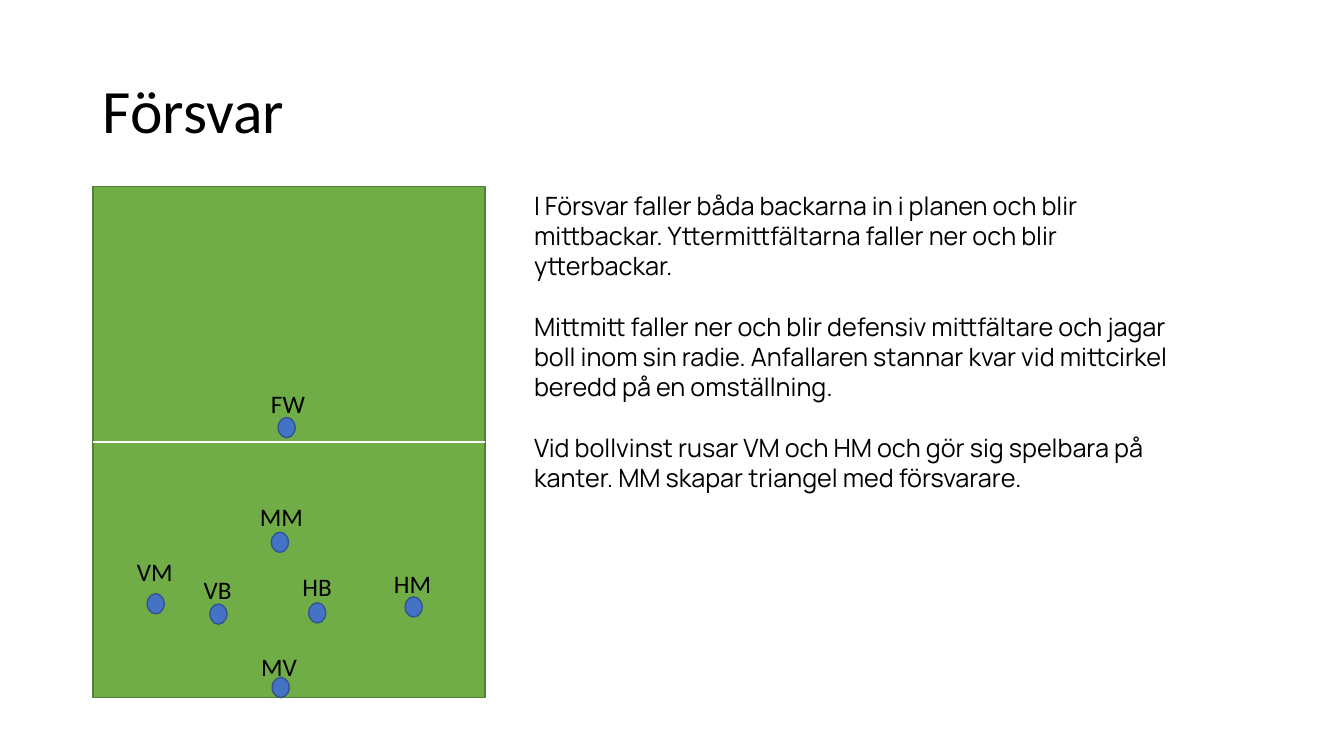
from lxml import etree
from pptx import Presentation
from pptx.dml.color import RGBColor
from pptx.enum.shapes import MSO_CONNECTOR as CONN, MSO_SHAPE as SHAPE
from pptx.enum.text import MSO_ANCHOR as ANCHOR, MSO_AUTO_SIZE as AUTO
from pptx.oxml.ns import qn
from pptx.util import Cm, Pt

COLORS = {"text": "000000", "grass": "70AD47", "grass_edge": "538035",
          "chalk": "FFFFFF", "player": "4472C4", "player_edge": "325491"}

TITLE_BOX = (2.34, 1.02, 29.21, 3.68)
PITCH_BOX = (2.34, 4.7, 9.88, 12.88)
TACTICS_BOX = (13.21, 4.67, 16.94, 10.26)
DOT_W, DOT_H, LABEL_H = 0.43, 0.51, 1.02

# label, dot left and top, label left, top and width, in cm from the pitch corner
PLAYERS = [
    ("MV", 4.52, 12.37, 3.99, 11.58, 1.42),
    ("VB", 2.95, 10.52, 2.54, 9.65, 1.22),
    ("MM", 4.5, 8.71, 3.96, 7.8, 1.6),
    ("VM", 1.37, 10.26, 0.86, 9.19, 1.42),
    ("HB", 5.44, 10.49, 5.03, 9.58, 1.27),
    ("HM", 7.87, 10.34, 7.34, 9.5, 1.47),
    ("FW", 4.67, 5.82, 4.24, 4.95, 1.37),
]

TACTICS = [
    "I Försvar faller båda backarna in i planen och blir mittbackar. "
    "Yttermittfältarna faller ner och blir ytterbackar.",
    "Mittmitt faller ner och blir defensiv mittfältare och jagar boll inom "
    "sin radie. Anfallaren stannar kvar vid mittcirkel beredd på en omställning.",
    "Vid bollvinst rusar VM och HM och gör sig spelbara på kanter. "
    "MM skapar triangel med försvarare.",
]


def rgb(name):
    return RGBColor.from_string(COLORS[name])


def add_text(s, box, paragraphs, font="Calibri", size=18, frame=None, para=None):
    """Add a text box; frame and para hold text frame and paragraph settings."""
    tf = s.shapes.add_textbox(*map(Cm, box)).text_frame
    for key, value in {"word_wrap": True, **(frame or {})}.items():
        setattr(tf, key, value)
    for i, text in enumerate(paragraphs):
        p = tf.add_paragraph() if i else tf.paragraphs[0]
        for key, value in (para or {}).items():
            setattr(p, key, value)
        r = p.add_run()
        r.text = text
        for key, value in {"name": font, "size": Pt(size)}.items():
            setattr(r.font, key, value)
        r.font.color.rgb = rgb("text")


def add_filled(s, kind, box, fill, edge):
    sp = s.shapes.add_shape(kind, *map(Cm, box))
    sp.shadow.inherit = False
    sp.fill.solid()
    sp.fill.fore_color.rgb = rgb(fill)
    sp.line.color.rgb = rgb(edge)
    sp.line.width = Pt(1)


def add_title(s, box):
    add_text(s, box, ["Försvar"], size=44,
             frame={"vertical_anchor": ANCHOR.MIDDLE}, para={"line_spacing": 0.9})


def add_pitch(s, box):
    """Draw the pitch, its halfway line and the labelled players."""
    x, y, w, h = box
    add_filled(s, SHAPE.RECTANGLE, box, "grass", "grass_edge")
    middle = y + h / 2
    halfway = s.shapes.add_connector(
        CONN.STRAIGHT, Cm(x), Cm(middle), Cm(x + w), Cm(middle))
    halfway.line.color.rgb = rgb("chalk")
    halfway.line.width = Pt(1.5)
    etree.SubElement(halfway._element.spPr, qn("a:effectLst"))
    for label, dot_x, dot_y, label_x, label_y, label_w in PLAYERS:
        add_filled(s, SHAPE.OVAL, (x + dot_x, y + dot_y, DOT_W, DOT_H),
                   "player", "player_edge")
        add_text(s, (x + label_x, y + label_y, label_w, LABEL_H), [label],
                 frame={"word_wrap": False, "auto_size": AUTO.SHAPE_TO_FIT_TEXT})


def add_tactics(s, box):
    add_text(s, box, TACTICS, font="Manrope", para={"space_after": Pt(21.6)})


def main():
    prs = Presentation()
    prs.slide_width, prs.slide_height = Cm(33.87), Cm(19.05)
    s = prs.slides.add_slide(prs.slide_layouts[6])
    add_title(s, TITLE_BOX)
    add_pitch(s, PITCH_BOX)
    add_tactics(s, TACTICS_BOX)
    prs.save("out.pptx")


if __name__ == "__main__":
    main()
